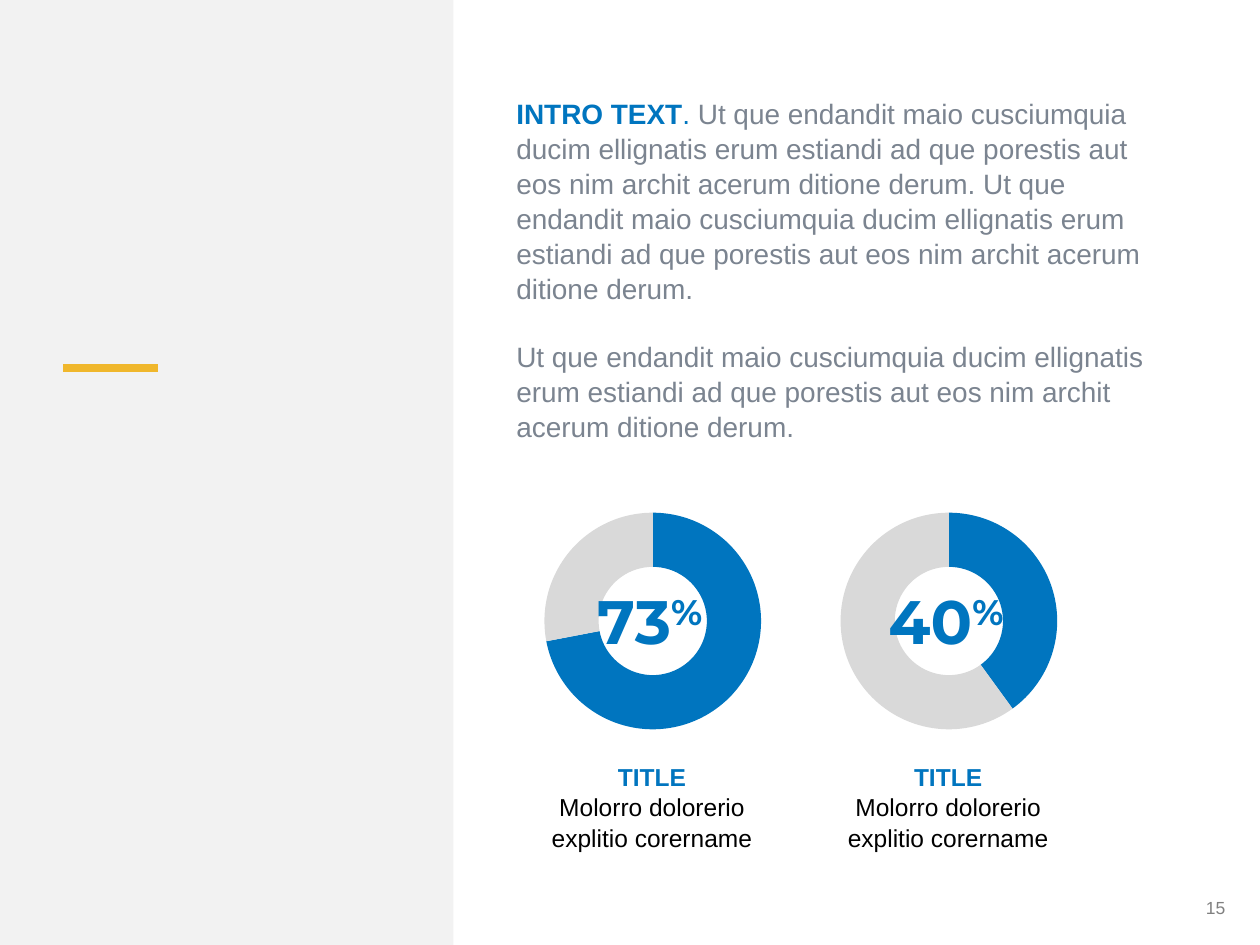
from lxml import etree
from pptx import Presentation
from pptx import util as u
from pptx.chart.data import CategoryChartData
from pptx.dml.color import RGBColor
from pptx.enum import chart as charts, shapes, text
from pptx.oxml import parse_xml
from pptx.oxml.ns import nsdecls, qn

BLUE = RGBColor(0x00, 0x75, 0xBF)
YELLOW = RGBColor(0xF0, 0xB7, 0x2C)
PANEL = RGBColor(0xF2, 0xF2, 0xF2)
SILVER = RGBColor(0xD9, 0xD9, 0xD9)
SLATE = RGBColor(0x7B, 0x84, 0x90)
GRAY = RGBColor(0x80, 0x80, 0x80)
BLACK = RGBColor(0, 0, 0)

FILLER = "Ut que endandit maio cusciumquia ducim ellignatis erum estiandi ad que porestis aut eos nim archit acerum ditione derum."
LAYOUT = (
    f'<c:layout {nsdecls("c")}><c:manualLayout><c:layoutTarget val="inner"/>'
    '<c:xMode val="edge"/><c:yMode val="edge"/><c:x val="0.21"/><c:y val="0.07"/>'
    '<c:w val="0.58"/><c:h val="0.86"/></c:manualLayout></c:layout>'
)


def add_text(page, left, top, width, height, paragraphs, size,
             align=text.PP_ALIGN.LEFT, name="Arial", spacing=1.0):
    box = page.shapes.add_textbox(u.Cm(left), u.Cm(top), u.Cm(width), u.Cm(height))
    frame = box.text_frame
    frame.word_wrap = True
    for index, spans in enumerate(paragraphs):
        para = frame.paragraphs[0] if index == 0 else frame.add_paragraph()
        para.alignment = align
        para.line_spacing = spacing
        para.font.size = u.Pt(size)
        para.font.name = name
        for words, color, bold in spans:
            span = para.add_run()
            span.text = words
            span.font.color.rgb = color
            span.font.bold = bold
    return frame


def add_side_panel(page, left, top, width, height):
    panel = page.shapes.add_shape(shapes.MSO_SHAPE.RECTANGLE, u.Cm(left), u.Cm(top), u.Cm(width), u.Cm(height))
    panel.shadow.inherit = False
    panel.fill.solid()
    panel.fill.fore_color.rgb = PANEL
    panel.line.fill.background()
    accent_top = u.Cm(top + 7.42)
    accent = page.shapes.add_connector(
        shapes.MSO_CONNECTOR.STRAIGHT, u.Cm(left + 1.27), accent_top, u.Cm(left + 3.18), accent_top)
    accent.line.color.rgb = YELLOW
    accent.line.width = u.Pt(5)
    etree.SubElement(accent._element.spPr, qn("a:effectLst"))


def add_intro(page, left, top, width, height):
    paragraphs = [
        [("INTRO TEXT", BLUE, True), (". ", BLUE, False), (f"{FILLER} {FILLER}", SLATE, False)],
        [(FILLER, SLATE, False)],
    ]
    frame = add_text(page, left, top, width, height, paragraphs, 16, spacing=1.04)
    frame.paragraphs[1].space_before = u.Pt(19.2)


def add_ring(page, left, top, width, height, value):
    data = CategoryChartData()
    data.categories = ["1", "2"]
    data.add_series("Series 1", (value, 100 - value))
    chart = page.shapes.add_chart(
        charts.XL_CHART_TYPE.DOUGHNUT, u.Cm(left), u.Cm(top), u.Cm(width), u.Cm(height), data).chart
    chart.has_legend = False
    chart.has_title = False
    chart.font.name = "Arial"
    chart.font.size = u.Pt(10)
    chart.font.color.rgb = BLACK
    plot = chart.plots[0]
    plot.vary_by_categories = True
    series = plot.series[0]
    series.format.line.color.rgb = SILVER
    series.format.line.width = u.Pt(0.75)
    for index, color in enumerate((BLUE, SILVER)):
        fill = series.points[index].format.fill
        fill.solid()
        fill.fore_color.rgb = color
    plot._element.find(qn("c:holeSize")).set("val", "75")
    area = plot._element.getparent()
    for layout in area.findall(qn("c:layout")):
        area.remove(layout)
    area.insert(0, parse_xml(LAYOUT))


def add_gauge(page, left, top, value, label, label_inset):
    add_ring(page, left, top, 7.62, 5.08, value)
    frame = add_text(page, left + label_inset, top + 1.65, 3.3, 1.75,
                     [[(label, BLUE, True), ("%", BLUE, True)]], 35, name="Montserrat")
    frame.paragraphs[0].runs[1].font._element.set("baseline", "30000")
    caption = [[("TITLE", BLUE, True)], [("Molorro dolorerio explitio corername", BLACK, False)]]
    add_text(page, left + 1.51, top + 5.23, 4.57, 2.06, caption, 14,
             text.PP_ALIGN.CENTER, spacing=1.04)


def add_page_number(page, left, top, width, height):
    frame = add_text(page, left, top, width, height, [[("15", GRAY, False)]], 10, text.PP_ALIGN.RIGHT)
    frame.vertical_anchor = text.MSO_ANCHOR.MIDDLE


def main():
    deck = Presentation()
    deck.slide_width = u.Cm(25.4)
    deck.slide_height = u.Cm(19.05)
    page = deck.slides.add_slide(deck.slide_layouts[6])
    add_side_panel(page, 0, 0, 9.14, 19.05)
    add_intro(page, 10.16, 1.8, 13.51, 7.77)
    gauges = [(72, "73", 2.44), (40, "40", 2.34)]
    for index, (value, label, label_inset) in enumerate(gauges):
        add_gauge(page, 9.35 + index * 5.97, 9.98, value, label, label_inset)
    add_page_number(page, 19.23, 17.91, 5.72, 0.76)
    deck.save("out.pptx")


if __name__ == "__main__":
    main()
